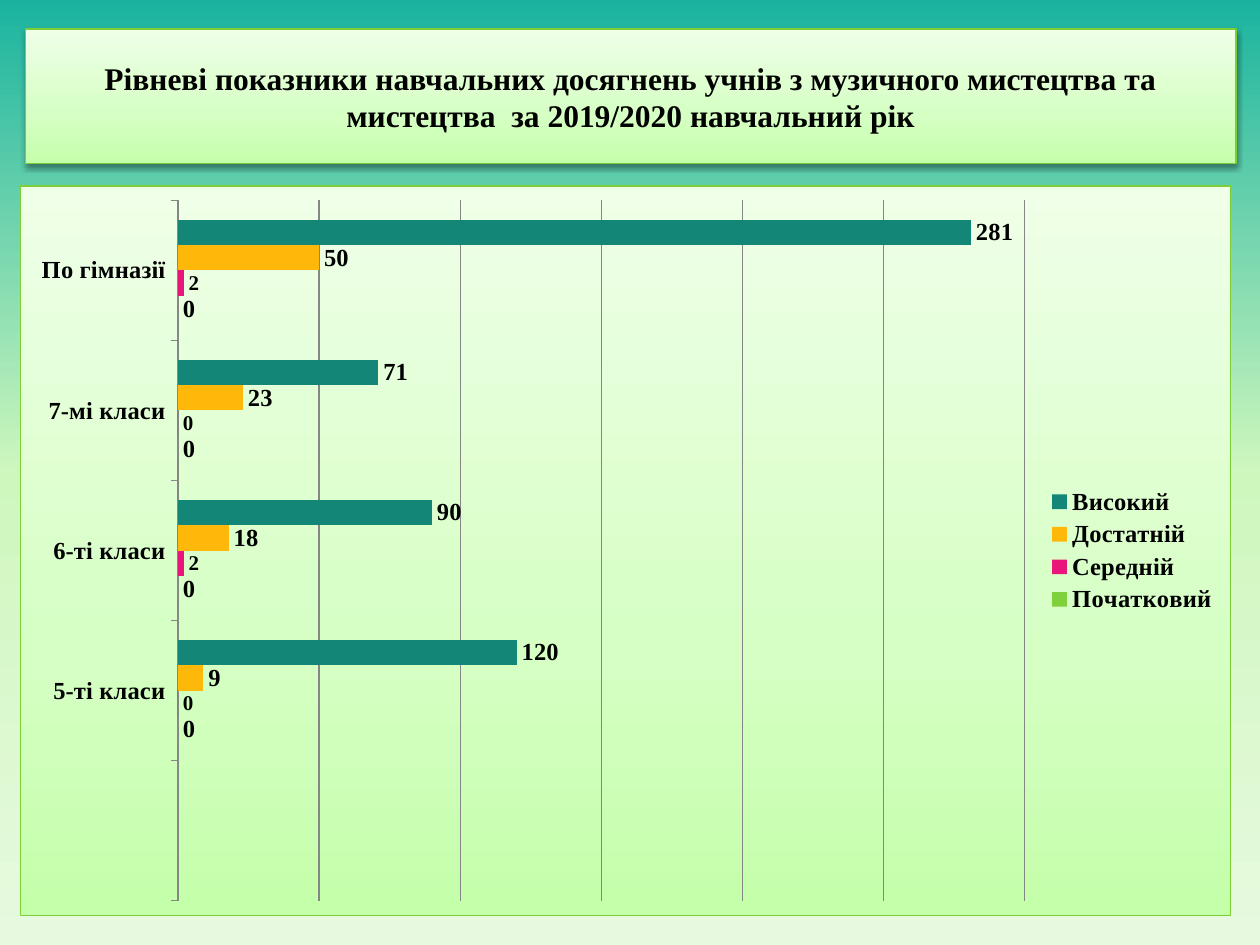
from lxml.etree import SubElement
from pptx import Presentation
from pptx.chart.data import CategoryChartData
from pptx.dml.color import RGBColor
from pptx.enum.chart import XL_CHART_TYPE as ChartType, XL_LABEL_POSITION as LabelPos
from pptx.enum.chart import XL_LEGEND_POSITION as LegendPos, XL_TICK_LABEL_POSITION as TickLabels
from pptx.enum.chart import XL_TICK_MARK as TickMark
from pptx.enum.text import MSO_ANCHOR as Anchor, MSO_AUTO_SIZE as AutoSize, PP_ALIGN as Align
from pptx.oxml import parse_xml
from pptx.oxml.ns import nsdecls, qn
from pptx.util import Inches, Pt

FONT = "Times New Roman"
GREEN_STOPS = [(0, "C4FFAA"), (35, "D5FFC3"), (100, "EFFFE8")]
SKY_STOPS = [(0, "1AB39F"), (50, "CEF7BD"), (100, "E7FADF")]
BORDER = "7CD036"
AXIS_GRAY = "868686"
CATEGORIES = ["", "5-ті класи", "6-ті класи", "7-мі класи", "По гімназії"]
# Level name, colour, label size, values
LEVELS = [
    ("Початковий", "7FD13B", 14, [None, 0, 0, 0, 0]),
    ("Середній", "EA157A", 12, [None, 0, 2, 0, 2]),
    ("Достатній", "FEB80A", 14, [None, 9, 18, 23, 50]),
    ("Високий", "138677", 14, [None, 120, 90, 71, 281]),
]


def rgb(hex_color):
    return RGBColor.from_string(hex_color)


def gradient_xml(stops, angle):
    stop_xml = "".join(
        f'<a:gs pos="{pos * 1000}"><a:srgbClr val="{color}"/></a:gs>' for pos, color in stops)
    return (f'<a:gradFill {nsdecls("a")} rotWithShape="1"><a:gsLst>{stop_xml}</a:gsLst>'
            f'<a:lin ang="{angle * 60000}" scaled="0"/></a:gradFill>')


def set_gradient(fill, owner, stops, angle):
    """Give the fill a gradient, then swap in the wanted stops."""
    fill.gradient()
    preset = next(owner.iter(qn("a:gradFill")))
    preset.getparent().replace(preset, parse_xml(gradient_xml(stops, angle)))


def style_font(font, size):
    font.name = FONT
    font.size = Pt(size)
    font.bold = True
    font.color.rgb = rgb("000000")


def style_line(line, color):
    line.color.rgb = rgb(color)
    line.width = Pt(0.75)


def add_heading(slide, left, top, width, height):
    heading = slide.shapes.title
    heading.left, heading.top, heading.width, heading.height = left, top, width, height
    set_gradient(heading.fill, heading.element, GREEN_STOPS, 270)
    style_line(heading.line, BORDER)
    # Soft shadow below the panel
    heading.shadow.inherit = False
    effects = heading.element.spPr.find(qn("a:effectLst"))
    shadow = SubElement(effects, qn("a:outerShdw"), blurRad=str(Pt(3.1)), dist=str(Pt(1.6)),
                        dir="5400000", rotWithShape="0")
    shade = SubElement(shadow, qn("a:srgbClr"), val="000000")
    SubElement(shade, qn("a:alpha"), val="38000")

    frame = heading.text_frame
    frame.text = ("Рівневі показники навчальних досягнень учнів з музичного мистецтва "
                  "та мистецтва  за 2019/2020 навчальний рік")
    frame.word_wrap = True
    frame.auto_size = AutoSize.NONE
    frame.vertical_anchor = Anchor.MIDDLE
    frame.paragraphs[0].alignment = Align.CENTER
    style_font(frame.paragraphs[0].font, 18)


def style_chart_area(chart):
    """Fill and frame the chart area, and fix the plot's place in it."""
    chart_part = chart.element.find(qn("c:chart"))
    chart_part.addnext(parse_xml(
        f'<c:spPr {nsdecls("c", "a")}>{gradient_xml(GREEN_STOPS, 270)}'
        f'<a:ln w="{Pt(0.75)}"><a:solidFill><a:srgbClr val="{BORDER}"/></a:solidFill></a:ln>'
        '</c:spPr>'))
    plot_area = chart_part.find(qn("c:plotArea"))
    for old_layout in plot_area.findall(qn("c:layout")):
        plot_area.remove(old_layout)
    place = "".join(f'<c:{key} val="{value}"/>' for key, value in [
        ("layoutTarget", "inner"), ("xMode", "edge"), ("yMode", "edge"),
        ("x", 0.13), ("y", 0.02), ("w", 0.7), ("h", 0.96)])
    plot_area.insert(0, parse_xml(
        f'<c:layout {nsdecls("c")}><c:manualLayout>{place}</c:manualLayout></c:layout>'))


def add_levels_chart(slide, left, top, width, height):
    data = CategoryChartData()
    data.categories = CATEGORIES
    for name, _, _, values in LEVELS:
        data.add_series(name, values)
    chart = slide.shapes.add_chart(
        ChartType.BAR_CLUSTERED, left, top, width, height, data).chart
    chart.has_title = False
    chart.font.name = "Calibri"
    chart.font.size = Pt(10)
    chart.font.color.rgb = rgb("000000")
    style_chart_area(chart)

    # Bars and their values
    plot = chart.plots[0]
    plot.gap_width = 150
    plot.overlap = 0
    plot.vary_by_categories = False
    for series, (_, color, label_size, _) in zip(plot.series, LEVELS):
        series.format.fill.solid()
        series.format.fill.fore_color.rgb = rgb(color)
        labels = series.data_labels
        labels.show_value = True
        labels.position = LabelPos.OUTSIDE_END
        style_font(labels.font, label_size)

    # Axes
    classes = chart.category_axis
    classes.major_tick_mark = TickMark.OUTSIDE
    style_font(classes.tick_labels.font, 14)
    style_line(classes.format.line, AXIS_GRAY)
    counts = chart.value_axis
    counts.minimum_scale, counts.maximum_scale, counts.major_unit = 0, 300, 50
    counts.has_major_gridlines = True
    style_line(counts.major_gridlines.format.line, AXIS_GRAY)
    counts.tick_label_position = TickLabels.NONE
    counts.visible = False

    # Legend
    chart.has_legend = True
    chart.legend.position = LegendPos.RIGHT
    chart.legend.include_in_layout = False
    style_font(chart.legend.font, 14)


def main():
    deck = Presentation()
    deck.slide_width, deck.slide_height = Inches(10), Inches(7.5)
    slide = deck.slides.add_slide(deck.slide_layouts.get_by_name("Title Only"))
    set_gradient(slide.background.fill, slide.element, SKY_STOPS, 90)
    add_heading(slide, Inches(0.2), Inches(0.23), Inches(9.61), Inches(1.07))
    add_levels_chart(slide, Inches(0.16), Inches(1.47), Inches(9.61), Inches(5.8))
    deck.save("out.pptx")


if __name__ == "__main__":
    main()
